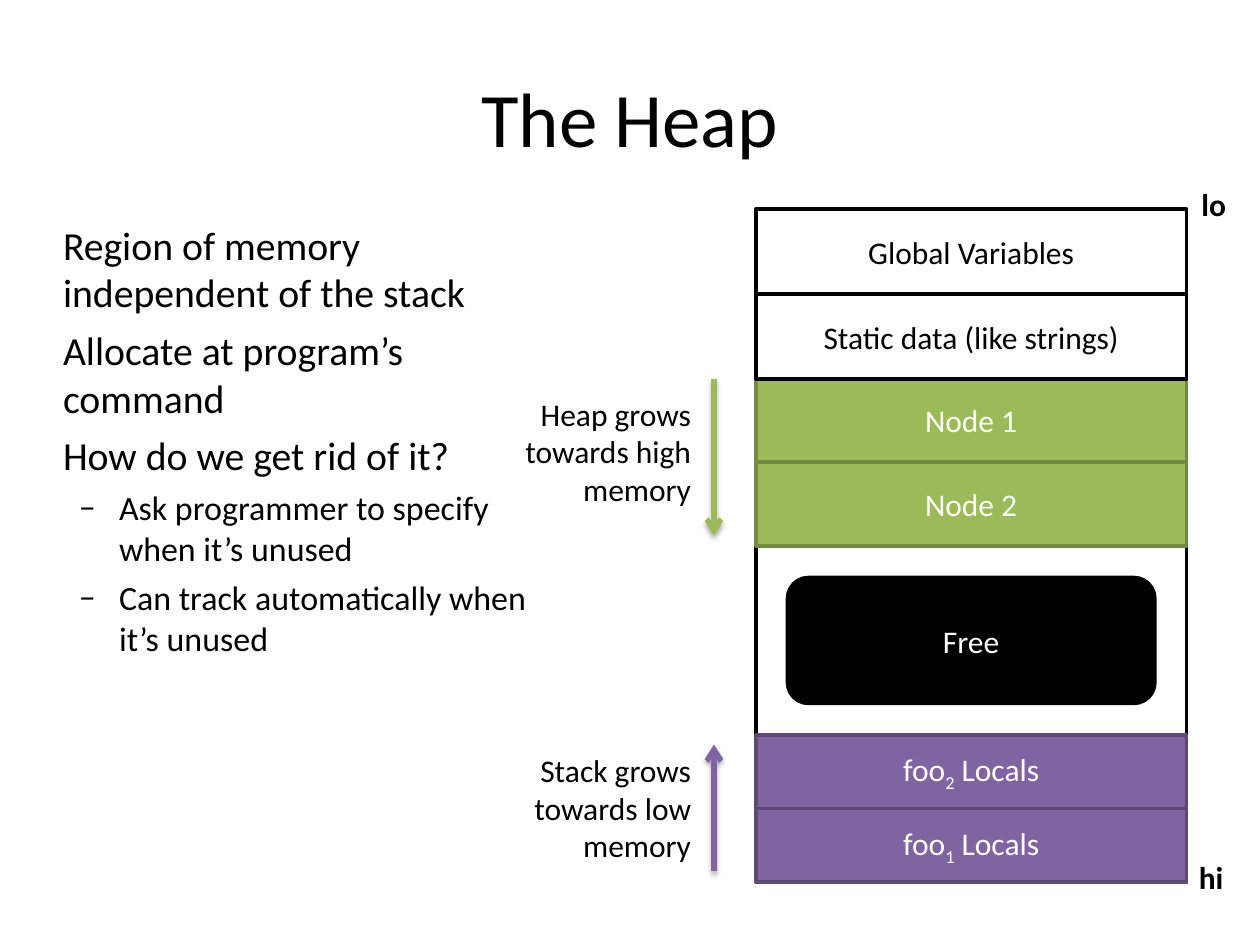
from lxml.etree import SubElement
from pptx import Presentation
from pptx.dml.color import RGBColor
from pptx.enum.shapes import MSO_CONNECTOR, MSO_SHAPE
from pptx.enum.text import MSO_ANCHOR, PP_ALIGN
from pptx.oxml.ns import qn
from pptx.util import Pt


def rgb(color):
    return RGBColor.from_string(color)


def add_text(p, text, size=18, color="000000", bold=False, align=PP_ALIGN.LEFT, sub=False):
    """Append a formatted run to paragraph p."""
    p.alignment = align
    r = p.add_run()
    r.text = text
    r.font.name = "Calibri"
    r.font.size = Pt(size)
    r.font.bold = bold
    r.font.color.rgb = rgb(color)
    if sub:
        r._r.get_or_add_rPr().set("baseline", "-25000")


prs = Presentation()
prs.slide_width, prs.slide_height = Pt(720), Pt(540)
s = prs.slides.add_slide(prs.slide_layouts[5])

# Title
title = s.shapes.title
title.left, title.top, title.width, title.height = Pt(36), Pt(21.6), Pt(648), Pt(90)
tf = title.text_frame
tf.margin_left = tf.margin_top = tf.margin_right = tf.margin_bottom = 0
tf.vertical_anchor = MSO_ANCHOR.MIDDLE
add_text(tf.paragraphs[0], "The Heap", size=44, align=PP_ALIGN.CENTER)

# Explanation on the left
body = [
    (0, "Region of memory independent of the stack"),
    (0, "Allocate at program’s command"),
    (0, "How do we get rid of it?"),
    (1, "Ask programmer to specify when it’s unused"),
    (1, "Can track automatically when it’s unused"),
]
tf = s.shapes.add_textbox(Pt(36), Pt(126), Pt(270), Pt(356.4)).text_frame
tf.word_wrap = True
tf.margin_left = tf.margin_top = tf.margin_right = tf.margin_bottom = 0
for i, (level, text) in enumerate(body):
    p = tf.add_paragraph() if i else tf.paragraphs[0]
    p.level = level
    p.space_before = Pt(4.8 if level else 5.6)
    add_text(p, text, size=19.4 if level else 22.7)
    if level:
        pPr = p._p.get_or_add_pPr()
        pPr.set("marL", str(Pt(32)))
        pPr.set("indent", str(-Pt(23)))
        SubElement(pPr, qn("a:buFont"), typeface="Calibri")
        SubElement(pPr, qn("a:buChar"), char="–")

# Memory map: every second part of a label is a subscript
LEFT, WIDTH = 432, 246
WHITE, BLACK = ("FFFFFF", "000000", "000000"), ("000000", "000000", "FFFFFF")
GREEN, PURPLE = ("9BBB59", "728A41", "FFFFFF"), ("8064A2", "5E4977", "FFFFFF")
regions = [
    ([], 120, 384, 0, WHITE),
    (["Global Variables"], 119.5, 48.5, 0, WHITE),
    (["Free"], 330, 72, 18, BLACK),
    (["foo", "2", " Locals"], 420, 42, 0, PURPLE),
    (["foo", "1", " Locals"], 462, 42, 0, PURPLE),
    (["Node 1"], 216, 48, 0, GREEN),
    (["Static data (like strings)"], 168, 48.5, 0, WHITE),
    (["Node 2"], 264, 48, 0, GREEN),
]
for label, top, height, inset, (fill, line, color) in regions:
    kind = MSO_SHAPE.ROUNDED_RECTANGLE if inset else MSO_SHAPE.RECTANGLE
    sp = s.shapes.add_shape(kind, Pt(LEFT + inset), Pt(top), Pt(WIDTH - 2 * inset), Pt(height))
    sp.shadow.inherit = False
    sp.fill.solid()
    sp.fill.fore_color.rgb = rgb(fill)
    sp.line.color.rgb = rgb(line)
    sp.line.width = Pt(2)
    tf = sp.text_frame
    tf.vertical_anchor = MSO_ANCHOR.MIDDLE
    for i, part in enumerate(label):
        add_text(tf.paragraphs[0], part, color=color, align=PP_ALIGN.CENTER, sub=i % 2 == 1)

# Growth arrows with their notes
growth = [
    ("Heap grows towards high memory", 222, 216.5, 306, "9BBB59"),
    ("Stack grows towards low memory", 425.5, 498, 425.5, "8064A2"),
]
for text, top, start, end, color in growth:
    tf = s.shapes.add_textbox(Pt(282), Pt(top), Pt(120), Pt(72)).text_frame
    tf.word_wrap = True
    add_text(tf.paragraphs[0], text, align=PP_ALIGN.RIGHT)

    arrow = s.shapes.add_connector(MSO_CONNECTOR.STRAIGHT, Pt(408), Pt(start), Pt(408), Pt(end))
    arrow.line.color.rgb = rgb(color)
    arrow.line.width = Pt(3)
    SubElement(arrow.line._get_or_add_ln(), qn("a:tailEnd"), type="arrow")
    effects = SubElement(arrow._element.spPr, qn("a:effectLst"))
    shadow = SubElement(effects, qn("a:outerShdw"), blurRad=str(Pt(3.1)), dist=str(Pt(1.8)),
                        dir="5400000", rotWithShape="0")
    black = SubElement(shadow, qn("a:srgbClr"), val="000000")
    SubElement(black, qn("a:alpha"), val="35000")

# Address ends
for text, left, top in [("lo", 679.5, 102), ("hi", 678, 487)]:
    tf = s.shapes.add_textbox(Pt(left), Pt(top), Pt(28), Pt(29)).text_frame
    tf.word_wrap = False
    tf.margin_right = 0
    add_text(tf.paragraphs[0], text, bold=True)

prs.save("out.pptx")
